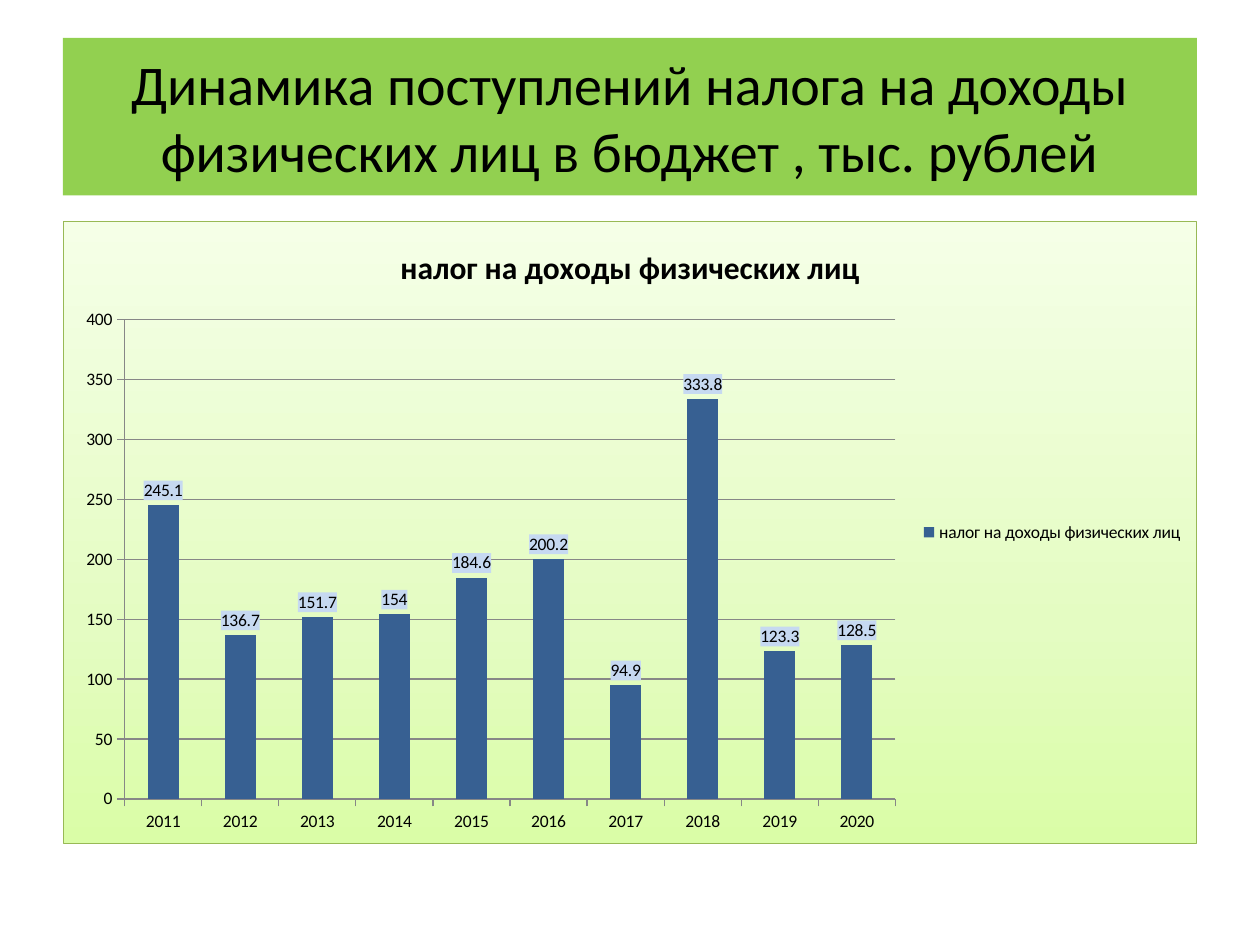
from lxml import etree
from pptx import Presentation
from pptx.chart.data import CategoryChartData
from pptx.dml.color import RGBColor
from pptx.enum import chart as ch, shapes, text
from pptx.oxml import parse_xml
from pptx.oxml.ns import nsdecls, qn
from pptx.util import Inches, Pt

BLACK = RGBColor(0x00, 0x00, 0x00)
GREEN = RGBColor(0x92, 0xD0, 0x50)
BAR_BLUE = RGBColor(0x37, 0x60, 0x92)
LABEL_BLUE = RGBColor(0xC6, 0xD9, 0xF1)
AXIS_GREY = RGBColor(0x87, 0x87, 0x87)
BORDER_GREEN = RGBColor(0x98, 0xB9, 0x55)
# Background gradient from bottom to top
BACKGROUND = [
    (0, RGBColor(0xDA, 0xFD, 0xA7)),
    (35, RGBColor(0xE4, 0xFC, 0xC2)),
    (100, RGBColor(0xF5, 0xFF, 0xE7)),
]
FONT = "Calibri"
TAX = "налог на доходы физических лиц"
RECEIPTS = [245.1, 136.7, 151.7, 154, 184.6, 200.2, 94.9, 333.8, 123.3, 128.5]

prs = Presentation()
prs.slide_width, prs.slide_height = Inches(10), Inches(7.5)
slide = prs.slides.add_slide(prs.slide_layouts[6])

# Heading band
heading = slide.shapes.add_shape(
    shapes.MSO_SHAPE.RECTANGLE, Inches(0.5), Inches(0.3), Inches(9), Inches(1.25))
heading.shadow.inherit = False
heading.fill.solid()
heading.fill.fore_color.rgb = GREEN
heading.line.fill.background()
heading.text_frame.word_wrap = True
heading.text_frame.vertical_anchor = text.MSO_ANCHOR.MIDDLE
line = heading.text_frame.paragraphs[0]
line.text = "Динамика поступлений налога на доходы физических лиц в бюджет , тыс. рублей"
line.alignment = text.PP_ALIGN.CENTER
line.font.name, line.font.size = FONT, Pt(32)
line.font.color.rgb = BLACK

# Column chart of yearly receipts
receipts = CategoryChartData()
receipts.categories = [str(year) for year in range(2011, 2021)]
receipts.add_series(TAX, RECEIPTS)
chart = slide.shapes.add_chart(
    ch.XL_CHART_TYPE.COLUMN_CLUSTERED,
    Inches(0.5), Inches(1.75), Inches(9), Inches(4.95), receipts).chart
chart.font.name, chart.font.size = FONT, Pt(10)
chart.font.color.rgb = BLACK

# Chart title and legend
chart.has_title = True
title = chart.chart_title.text_frame.paragraphs[0]
title.text = TAX
title.font.name, title.font.size, title.font.bold = FONT, Pt(18), True
title.font.color.rgb = BLACK
chart.has_legend = True
chart.legend.position = ch.XL_LEGEND_POSITION.RIGHT
chart.legend.include_in_layout = False

# Axes and gridlines
for axis in (chart.category_axis, chart.value_axis):
    axis.major_tick_mark = ch.XL_TICK_MARK.OUTSIDE
    axis.minor_tick_mark = ch.XL_TICK_MARK.NONE
    axis.format.line.color.rgb = AXIS_GREY
    axis.format.line.width = Pt(0.75)
values = chart.value_axis
values.minimum_scale, values.maximum_scale, values.major_unit = 0, 400, 50
values.has_major_gridlines = True
values.major_gridlines.format.line.color.rgb = AXIS_GREY
values.major_gridlines.format.line.width = Pt(0.75)

# Columns and their value labels
plot = chart.plots[0]
plot.vary_by_categories = False
plot.gap_width = 150
columns = plot.series[0]
columns.format.fill.solid()
columns.format.fill.fore_color.rgb = BAR_BLUE
labels = columns.data_labels
labels.show_value = True
labels.position = ch.XL_LABEL_POSITION.OUTSIDE_END
label_fill = parse_xml(
    f'<c:spPr {nsdecls("c", "a")}><a:solidFill><a:srgbClr val="{LABEL_BLUE}"/>'
    '</a:solidFill></c:spPr>')
columns._element.find(qn("c:dLbls")).insert(0, label_fill)

# Chart background and border
stops = "".join(
    f'<a:gs pos="{pos * 1000}"><a:srgbClr val="{color}"/></a:gs>'
    for pos, color in BACKGROUND)
chart_area = parse_xml(
    f'<c:spPr {nsdecls("c", "a")}><a:gradFill><a:gsLst>{stops}</a:gsLst>'
    f'<a:lin ang="{270 * 60000}" scaled="1"/></a:gradFill>'
    f'<a:ln w="{Pt(0.75)}"><a:solidFill><a:srgbClr val="{BORDER_GREEN}"/>'
    '</a:solidFill></a:ln></c:spPr>')
chart._chartSpace.find(qn("c:txPr")).addprevious(chart_area)
# Keep the plot area clear so the gradient shows through
clear = etree.SubElement(chart._chartSpace.find(".//" + qn("c:plotArea")), qn("c:spPr"))
etree.SubElement(clear, qn("a:noFill"))

prs.save("out.pptx")
